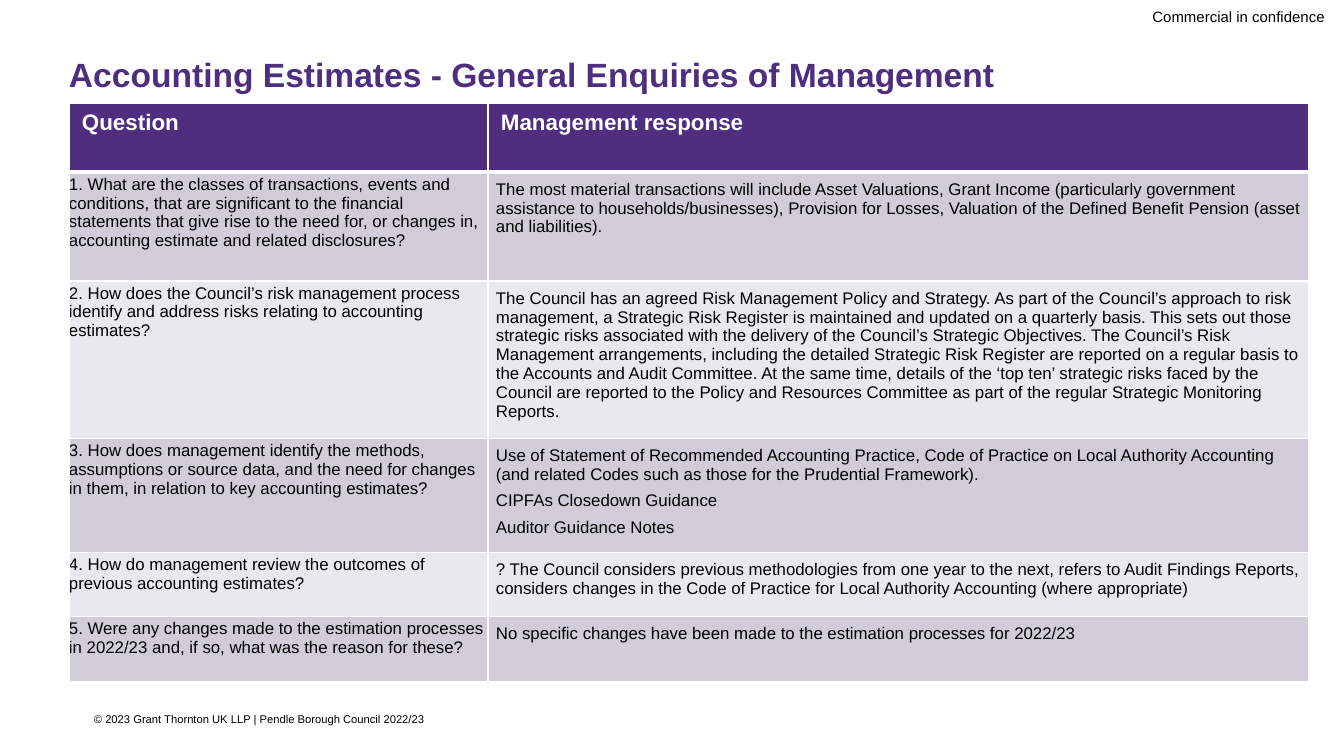
from dataclasses import dataclass

from lxml.etree import SubElement
from pptx import Presentation
from pptx.dml.color import RGBColor
from pptx.enum.text import MSO_ANCHOR, MSO_AUTO_SIZE, PP_ALIGN
from pptx.oxml.ns import qn
from pptx.util import Emu, Pt

PX_PER_INCH = 134.4


@dataclass(frozen=True)
class Theme:
    font: str = "Arial"
    purple: str = "4F2D7F"
    band_dark: str = "D0CDD8"
    band_light: str = "E9E8EC"
    white: str = "FFFFFF"
    black: str = "000000"
    title_size: int = 18
    header_size: int = 12
    body_size: int = 9
    label_size: int = 8
    footer_size: int = 6


THEME = Theme()

HEADINGS = ["Question", "Management response"]
# Each entry: least row height in px, question, paragraphs of the response
ENQUIRIES = [
    (109,
     "1. What are the classes of transactions, events and conditions, that are significant to the "
     "financial statements that give rise to the need for, or changes in, accounting estimate and "
     "related disclosures?",
     ["The most material transactions will include Asset Valuations, Grant Income (particularly "
      "government assistance to households/businesses), Provision for Losses, Valuation of the "
      "Defined Benefit Pension (asset and liabilities)."]),
    (101,
     "2. How does the Council’s risk management process identify and address risks relating to "
     "accounting estimates?",
     ["The Council has an agreed Risk Management Policy and Strategy. As part of the Council’s "
      "approach to risk management, a Strategic Risk Register is maintained and updated on a "
      "quarterly basis. This sets out those strategic risks associated with the delivery of the "
      "Council’s Strategic Objectives. The Council’s Risk Management arrangements, including the "
      "detailed Strategic Risk Register are reported on a regular basis to the Accounts and Audit "
      "Committee. At the same time, details of the ‘top ten’ strategic risks faced by the Council "
      "are reported to the Policy and Resources Committee as part of the regular Strategic "
      "Monitoring Reports."]),
    (114,
     "3. How does management identify the methods, assumptions or source data, and the need for "
     "changes in them, in relation to key accounting estimates?",
     ["Use of Statement of Recommended Accounting Practice, Code of Practice on Local Authority "
      "Accounting (and related Codes such as those for the Prudential Framework).",
      "CIPFAs Closedown Guidance",
      "Auditor Guidance Notes"]),
    (64,
     "4. How do management review the outcomes of previous accounting estimates?",
     ["? The Council considers previous methodologies from one year to the next, refers to Audit "
      "Findings Reports, considers changes in the Code of Practice for Local Authority Accounting "
      "(where appropriate)"]),
    (65,
     "5. Were any changes made to the estimation processes in 2022/23 and, if so, what was the "
     "reason for these?",
     ["No specific changes have been made to the estimation processes for 2022/23"]),
]


def px(length):
    return Emu(round(length * 914400 / PX_PER_INCH))


def write_text(frame, paragraphs, *, size, color=THEME.black, bold=False,
               align=PP_ALIGN.LEFT, line_spacing=None, gap=0):
    """Fill a text frame; gap is the space in points between paragraphs."""
    for index, text in enumerate(paragraphs):
        paragraph = frame.add_paragraph() if index else frame.paragraphs[0]
        paragraph.alignment = align
        paragraph.line_spacing = line_spacing
        if index:
            paragraph.space_before = Pt(gap)
        run = paragraph.add_run()
        run.text = text
        run.font.name = THEME.font
        run.font.size = Pt(size)
        run.font.bold = bold
        run.font.color.rgb = RGBColor.from_string(color)


def set_margins(target, horizontal, vertical):
    target.margin_left = target.margin_right = px(horizontal)
    target.margin_top = target.margin_bottom = px(vertical)


def set_borders(cell, bottom_width):
    """White cell borders; they must precede the fill in the cell properties."""
    properties = cell._tc.get_or_add_tcPr()
    for side, width in (("L", 1), ("R", 1), ("T", 1), ("B", bottom_width)):
        line = SubElement(properties, qn(f"a:ln{side}"), w=str(Pt(width)))
        fill = SubElement(line, qn("a:solidFill"))
        SubElement(fill, qn("a:srgbClr"), val=THEME.white)


def format_cell(cell, paragraphs, fill, margins, bottom_width=1, **text_format):
    set_borders(cell, bottom_width)
    cell.fill.solid()
    cell.fill.fore_color.rgb = RGBColor.from_string(fill)
    set_margins(cell, *margins)
    cell.vertical_anchor = MSO_ANCHOR.TOP
    write_text(cell.text_frame, paragraphs, **text_format)


def add_label(slide, box, text, anchor=MSO_ANCHOR.TOP, right_margin=0, **text_format):
    frame = slide.shapes.add_textbox(*map(px, box)).text_frame
    frame.word_wrap = True
    frame.vertical_anchor = anchor
    set_margins(frame, 0, 0)
    frame.margin_right = px(right_margin)
    write_text(frame, [text], **text_format)


def place_title(slide, box, text):
    title = slide.shapes.title
    title.left, title.top, title.width, title.height = map(px, box)
    frame = title.text_frame
    frame.word_wrap = True
    frame.auto_size = MSO_AUTO_SIZE.NONE
    frame.vertical_anchor = MSO_ANCHOR.TOP
    set_margins(frame, 0, 0)
    write_text(frame, [text], size=THEME.title_size, color=THEME.purple,
               bold=True, line_spacing=0.9)


def add_enquiry_table(slide, box, question_width, header_height):
    width = box[2]
    table = slide.shapes.add_table(len(ENQUIRIES) + 1, len(HEADINGS), *map(px, box)).table
    table.columns[0].width = px(question_width)
    table.columns[1].width = px(width - question_width)

    # Header row
    table.rows[0].height = px(header_height)
    for column, heading in enumerate(HEADINGS):
        format_cell(table.cell(0, column), [heading], THEME.purple, (13, 7), bottom_width=3,
                    size=THEME.header_size, color=THEME.white, bold=True)

    # Banded question and response rows
    for row, (row_height, question, response) in enumerate(ENQUIRIES, start=1):
        table.rows[row].height = px(row_height)
        band = THEME.band_dark if row % 2 else THEME.band_light
        format_cell(table.cell(row, 0), [question], band, (0, 3), size=THEME.body_size)
        format_cell(table.cell(row, 1), response, band, (8, 8), size=THEME.body_size, gap=4)


def main():
    presentation = Presentation()
    presentation.slide_width, presentation.slide_height = px(1344), px(756)
    slide = presentation.slides.add_slide(presentation.slide_layouts[5])

    # Footer and confidentiality marking
    add_label(slide, (94, 712, 579, 14),
              "© 2023 Grant Thornton UK LLP | Pendle Borough Council 2022/23",
              size=THEME.footer_size)
    add_label(slide, (1134, 0, 210, 32), "Commercial in confidence",
              anchor=MSO_ANCHOR.MIDDLE, right_margin=19,
              size=THEME.label_size, align=PP_ALIGN.RIGHT)

    # Title and table
    place_title(slide, (69, 58, 1207, 117),
                "Accounting Estimates - General Enquiries of Management")
    add_enquiry_table(slide, (69, 103, 1240, 579), question_width=419, header_height=69)

    presentation.save("out.pptx")


if __name__ == "__main__":
    main()
